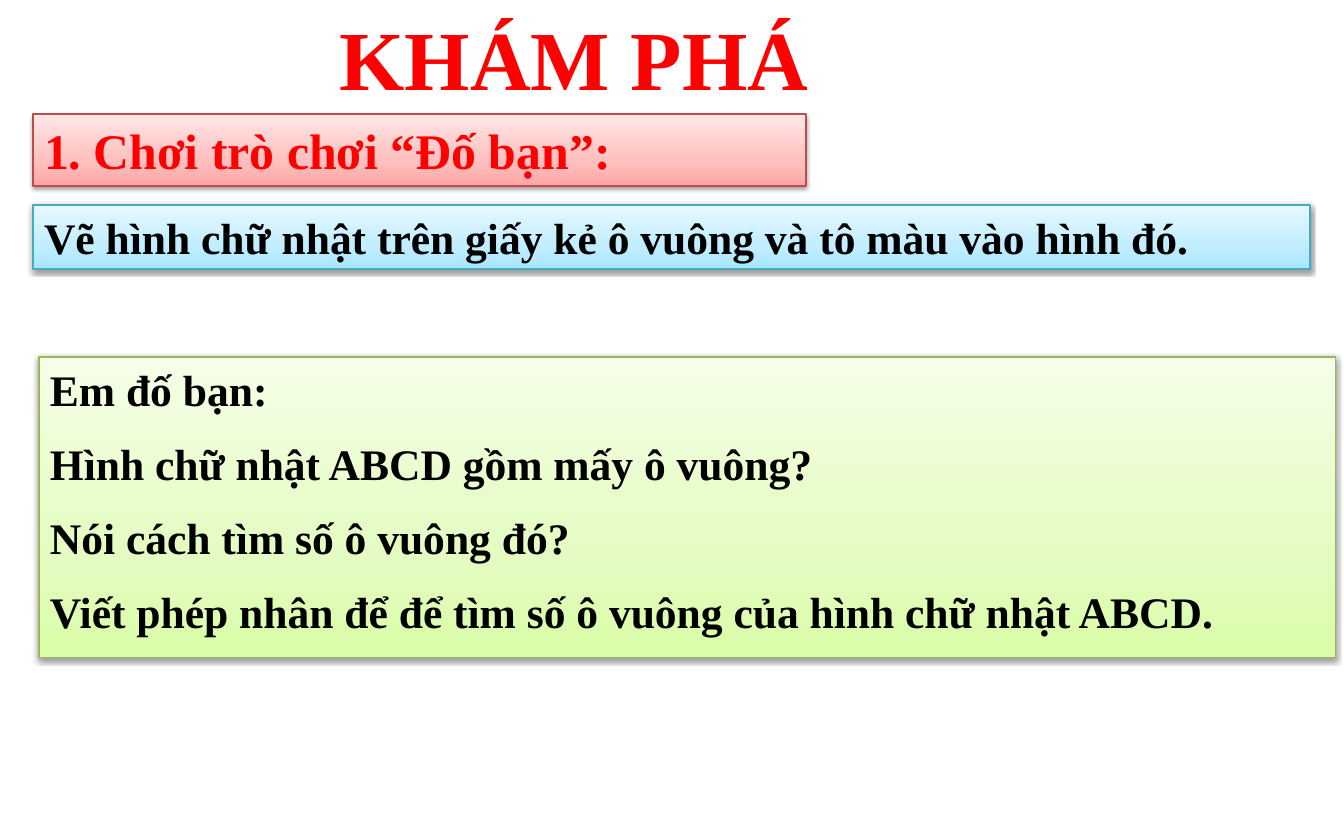
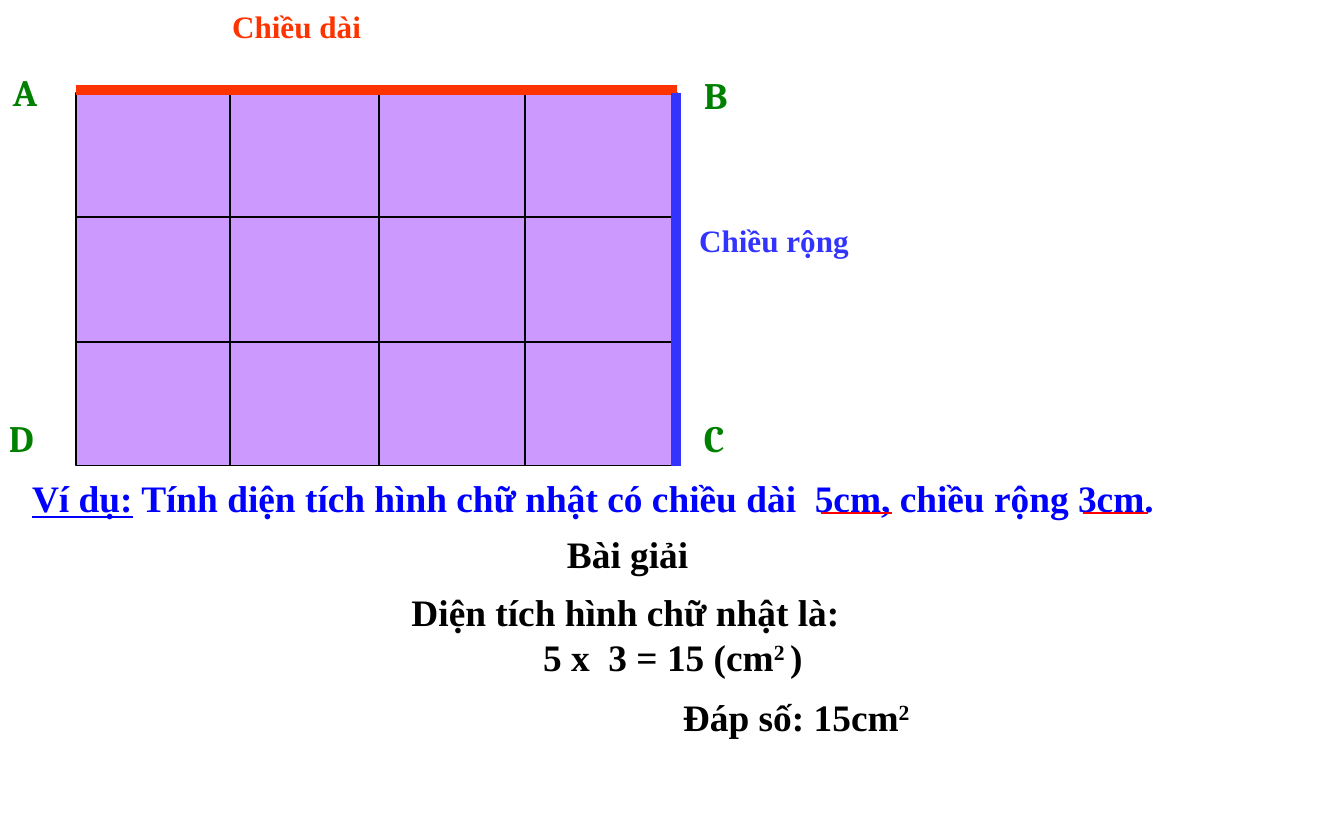
from copy import deepcopy
from itertools import pairwise

from lxml.etree import SubElement
from pptx import Presentation
from pptx.dml.color import RGBColor
from pptx.enum.shapes import MSO_CONNECTOR as Connector, MSO_SHAPE as Shape
from pptx.enum.text import MSO_ANCHOR as Anchor, MSO_AUTO_SIZE as AutoSize, PP_ALIGN as Align
from pptx.oxml.ns import qn
from pptx.util import Emu, Pt

PX = 914400 / 112
COLORS = {
    "red": "FF0000", "black": "000000", "blue": "0000FF", "green": "008000",
    "length": "FF3300", "width": "3333FF", "cell": "CC99FF",
}
PANELS = {
    "pink": ("BF4C48", ("FFA6A5", "FFC0BF", "FFE7E7")),
    "sky": ("46AAC5", ("A7E6FF", "C1EDFF", "E7F8FF")),
    "lime": ("98B955", ("DAFDA7", "E4FCC2", "F5FFE7")),
}
BODY = {"name": "Times New Roman", "bold": True}
CORNER = {"name": "Cambria", "bold": True}
COLUMNS = (76, 230, 379, 525, 677)
ROWS = (93, 217, 342, 466)


def px(*lengths):
    """Turn pixel lengths into EMU."""
    return [Emu(round(length * PX)) for length in lengths]


def rgb(color):
    """Return a colour by palette name or hex string."""
    return RGBColor.from_string(COLORS.get(color, color))


def space_before_half(para):
    """Put half a line of space above a paragraph."""
    space = SubElement(para._p.get_or_add_pPr(), qn("a:spcBef"))
    SubElement(space, qn("a:spcPct"), val="50000")


def write(box, paragraphs, size, color, style=BODY, spaced=False, align=None, indents=()):
    """Fill a box with paragraphs made of (text, format) spans."""
    frame = box.text_frame
    frame.word_wrap = True
    frame.vertical_anchor = Anchor.TOP
    frame.auto_size = AutoSize.SHAPE_TO_FIT_TEXT
    for index, spans in enumerate(paragraphs):
        para = frame.add_paragraph() if index else frame.paragraphs[0]
        para.alignment = align or Align.LEFT
        if spaced:
            space_before_half(para)
        if index < len(indents):
            para._p.get_or_add_pPr().set("marL", str(px(indents[index])[0]))
        for text, extra in spans:
            span = para.add_run()
            span.text = text
            formats = {**style, "size": Pt(size), **extra}
            raised = formats.pop("raised", False)
            for name, value in formats.items():
                setattr(span.font, name, value)
            span.font.color.rgb = rgb(color)
            if raised:
                span.font._element.set("baseline", "30000")


def plain(*lines):
    """Make one unformatted span per paragraph."""
    return [[(line, {})] for line in lines]


def add_text(page, place, paragraphs, size, color, **options):
    """Add a text box."""
    box = page.shapes.add_textbox(*px(*place))
    write(box, paragraphs, size, color, **options)
    return box


def add_shadow(box):
    """Give a shape a soft shadow below it."""
    effects = box.element.spPr.find(qn("a:effectLst"))
    shadow = SubElement(effects, qn("a:outerShdw"), blurRad="40000", dist="20000",
                        dir="5400000", rotWithShape="0")
    tint = SubElement(shadow, qn("a:srgbClr"), val=COLORS["black"])
    SubElement(tint, qn("a:alpha"), val="38000")


def add_panel(page, place, theme, lines, size, color):
    """Add a gradient panel with text."""
    edge, shades = PANELS[theme]
    box = page.shapes.add_shape(Shape.RECTANGLE, *px(*place))
    box.fill.gradient()
    box.fill.gradient_angle = 90
    stop_list = box.element.spPr.find(".//" + qn("a:gsLst"))
    stop_list.insert(1, deepcopy(stop_list[0]))
    for stop, shade, position in zip(box.fill.gradient_stops, shades, (0, 0.35, 1)):
        stop.color.rgb = rgb(shade)
        stop.position = position
    box.line.color.rgb = rgb(edge)
    box.line.width = Pt(0.75)
    box.shadow.inherit = False
    add_shadow(box)
    write(box, plain(*lines), size, color, spaced=True)


def add_line(page, ends, color, width):
    """Add a straight line without a shadow."""
    line = page.shapes.add_connector(Connector.STRAIGHT, *px(*ends))
    line.line.color.rgb = rgb(color)
    line.line.width = Pt(width)
    SubElement(line.element.spPr, qn("a:effectLst"))


def add_grid(page):
    """Draw the squares of rectangle ABCD and mark its length and width."""
    for top, bottom in pairwise(ROWS):
        for left, right in pairwise(COLUMNS):
            cell = page.shapes.add_shape(
                Shape.RECTANGLE, *px(left, top, right - left, bottom - top))
            cell.shadow.inherit = False
            cell.fill.solid()
            cell.fill.fore_color.rgb = rgb("cell")
            cell.line.color.rgb = rgb("black")
            cell.line.width = Pt(0.75)
    for left, right in pairwise(COLUMNS):
        add_line(page, (left, 90, right, 90), "length", 6)
    for top, bottom in pairwise(ROWS):
        add_line(page, (676, top, 676, bottom), "width", 6)


def build_game(page):
    """Build the quiz game slide."""
    add_panel(page, (33, 114, 773, 72), "pink", ["1. Chơi trò chơi “Đố bạn”:"], 32, "red")
    add_panel(page, (33, 205, 1277, 64), "sky",
              ["Vẽ hình chữ nhật trên giấy kẻ ô vuông và tô màu vào hình đó."], 28, "black")
    add_panel(page, (39, 357, 1297, 301), "lime", [
        "Em đố bạn:",
        "Hình chữ nhật ABCD gồm mấy ô vuông?",
        "Nói cách tìm số ô vuông đó?",
        "Viết phép nhân để để tìm số ô vuông của hình chữ nhật ABCD.",
    ], 28, "black")
    title = add_text(page, (326, 1, 496, 113), plain("KHÁM PHÁ"), 54, "red", align=Align.CENTER)
    title.text_frame.word_wrap = False


def build_example(page):
    """Build the area example slide."""
    add_grid(page)
    add_text(page, (221, 2, 302, 48), plain("Chiều dài"), 20, "length", spaced=True)
    add_text(page, (688, 216, 302, 48), plain("Chiều rộng"), 20, "width", spaced=True)
    for letter, left, top in (("A", 2, 64), ("B", 693, 67), ("C", 693, 410), ("D", -2, 410)):
        add_text(page, (left, top, 56, 56), plain(letter), 24, "green", style=CORNER, spaced=True)

    add_text(page, (21, 470, 1296, 56), [[
        ("Ví dụ:", {"underline": True}),
        (" Tính diện tích hình chữ nhật có chiều dài  5cm, chiều rộng 3cm.", {}),
    ]], 24, "blue", align=Align.JUSTIFY)
    add_text(page, (556, 526, 362, 56), plain("Bài giải"), 24, "black", spaced=True)
    add_text(page, (328, 584, 595, 102), [
        [("Diện tích hình chữ nhật là:", {})],
        [("5 x  3 = 15 (cm", {}), ("2 ", {"raised": True}), (") ", {})],
    ], 24, "black", align=Align.CENTER, indents=(0, 104))
    add_text(page, (644, 689, 289, 56), [
        [("Đáp số: 15cm", {}), ("2", {"raised": True})],
    ], 24, "black", indents=(28,))
    for left, right in ((821, 892), (1083, 1148)):
        add_line(page, (left, 513, right, 513), "red", 1.5)


def main():
    """Build and save the deck."""
    deck = Presentation()
    deck.slide_width, deck.slide_height = px(1344, 840)
    for build in (build_game, build_example):
        build(deck.slides.add_slide(deck.slide_layouts[6]))
    deck.save("out.pptx")


if __name__ == "__main__":
    main()
